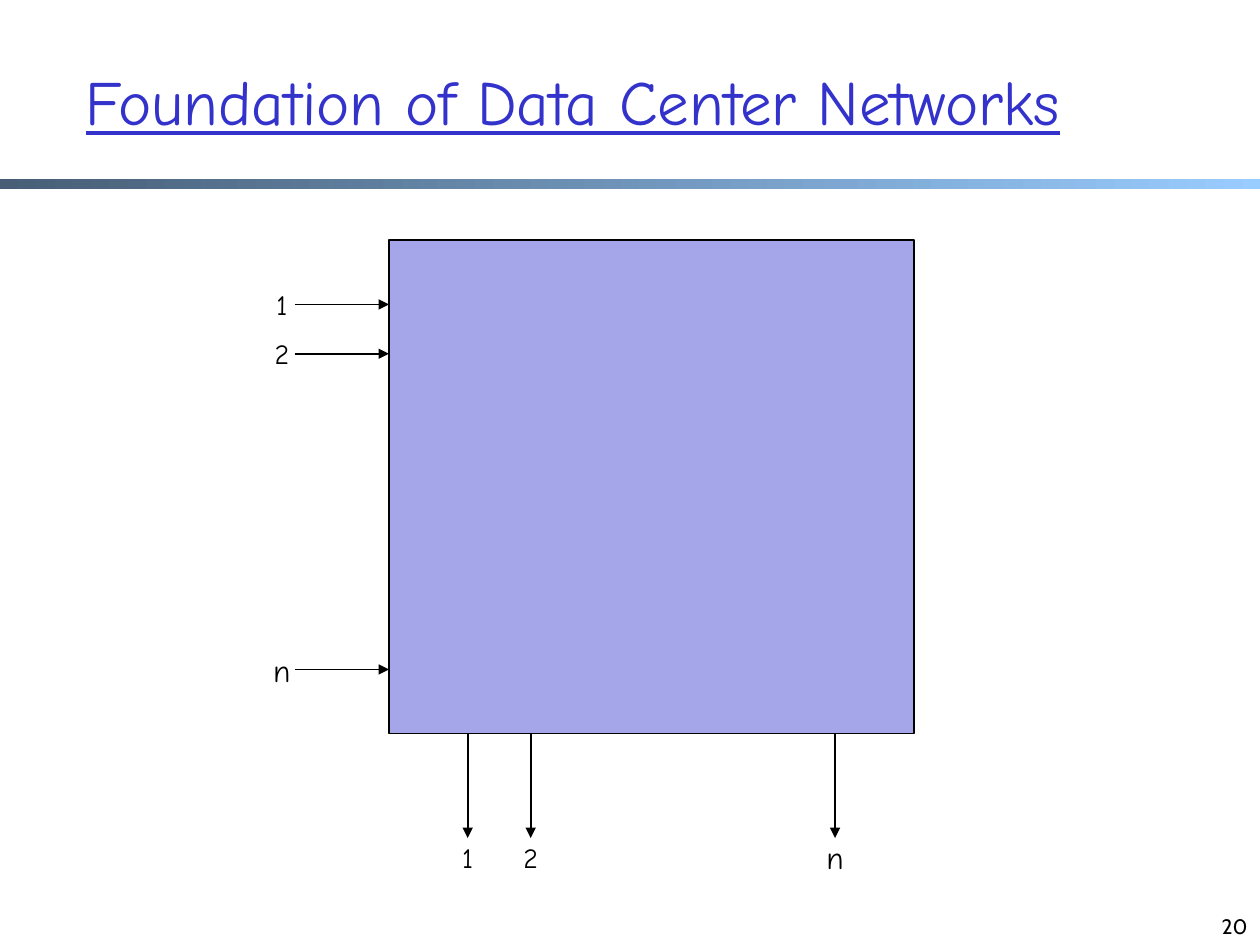
from lxml import etree
from pptx import Presentation
from pptx.dml.color import RGBColor
from pptx.enum import shapes, text
from pptx.oxml.ns import qn
from pptx.util import Inches, Pt

WIDTH, HEIGHT = 10.01, 7.51
COLORS = {"title": "3333CC", "ink": "000000", "switch": "A5A5E9",
          "bar_dark": "475E76", "bar_light": "99CCFF"}
# Port name, font size, share along the input side, share along the output side
PORTS = [("1", 16, 0.13, 0.15), ("2", 16, 0.23, 0.27), ("n", 18, 0.87, 0.85)]
INPUT_LENGTH, OUTPUT_LENGTH = 0.75, 0.83


def color(name):
    return RGBColor.from_string(COLORS[name])


def inches(*lengths):
    return [Inches(length) for length in lengths]


def style_text(box, size, font, ink, align, anchor):
    frame = box.text_frame
    frame.auto_size = text.MSO_AUTO_SIZE.NONE
    frame.vertical_anchor = anchor
    para = frame.paragraphs[0]
    para.alignment = align
    para.font.size = Pt(size)
    para.font.name = font
    para.font.color.rgb = color(ink)
    return para


def add_rectangle(page, area):
    box = page.shapes.add_shape(shapes.MSO_SHAPE.RECTANGLE, *inches(*area))
    box.shadow.inherit = False
    return box


def add_arrow(page, start, end):
    arrow = page.shapes.add_connector(
        shapes.MSO_CONNECTOR.STRAIGHT, *inches(*start, *end))
    arrow.line.color.rgb = color("ink")
    arrow.line.width = Pt(1)
    outline = arrow.line._get_or_add_ln()
    etree.SubElement(outline, qn("a:tailEnd"), type="triangle")
    etree.SubElement(arrow._element.spPr, qn("a:effectLst"))


def add_label(page, name, size, center_x, center_y):
    width, height = 0.33, 0.4
    box = page.shapes.add_textbox(*inches(
        center_x - width / 2, center_y - height / 2, width, height))
    box.text_frame.text = name
    box.text_frame.word_wrap = False
    style_text(box, size, "Comic Neue", "ink",
               text.PP_ALIGN.CENTER, text.MSO_ANCHOR.MIDDLE)


def add_heading(page, area):
    left, top, width, height = area
    # Gradient bar under the title
    bar = add_rectangle(page, (0, top + height, WIDTH, 0.08))
    bar.line.fill.background()
    bar.fill.gradient()
    bar.fill.gradient_angle = 0
    for stop, name in zip(bar.fill.gradient_stops, ("bar_dark", "bar_light")):
        stop.color.rgb = color(name)
    # Title
    title = page.shapes.title
    title.left, title.top, title.width, title.height = inches(*area)
    title.text_frame.text = "Foundation of Data Center Networks"
    para = style_text(title, 36, "Comic Neue", "title",
                      text.PP_ALIGN.LEFT, text.MSO_ANCHOR.MIDDLE)
    para.font.underline = True


def add_switch(page, area):
    left, top, width, height = area
    bottom = top + height
    # Switch body
    body = add_rectangle(page, area)
    body.fill.solid()
    body.fill.fore_color.rgb = color("switch")
    body.line.color.rgb = color("ink")
    body.line.width = Pt(1)
    # Input and output ports
    for name, size, input_share, output_share in PORTS:
        y = top + input_share * height
        add_arrow(page, (left - INPUT_LENGTH, y), (left, y))
        add_label(page, name, size, left - INPUT_LENGTH - 0.1, y)
        x = left + output_share * width
        add_arrow(page, (x, bottom), (x, bottom + OUTPUT_LENGTH))
        add_label(page, name, size, x, bottom + OUTPUT_LENGTH + 0.15)


def add_page_number(page, area):
    box = page.shapes.add_textbox(*inches(*area))
    box.text_frame.text = "20"
    box.text_frame.word_wrap = True
    style_text(box, 12, "Cabin", "ink",
               text.PP_ALIGN.RIGHT, text.MSO_ANCHOR.BOTTOM)


def main():
    deck = Presentation()
    deck.slide_width, deck.slide_height = inches(WIDTH, HEIGHT)
    page = deck.slides.add_slide(deck.slide_layouts.get_by_name("Title Only"))
    add_heading(page, (0.58, 0.17, 9.26, 1.25))
    add_switch(page, (3.09, 1.91, 4.17, 3.92))
    add_page_number(page, (WIDTH - 2.33, HEIGHT - 0.5, 2.33, 0.5))
    deck.save("out.pptx")


if __name__ == "__main__":
    main()
